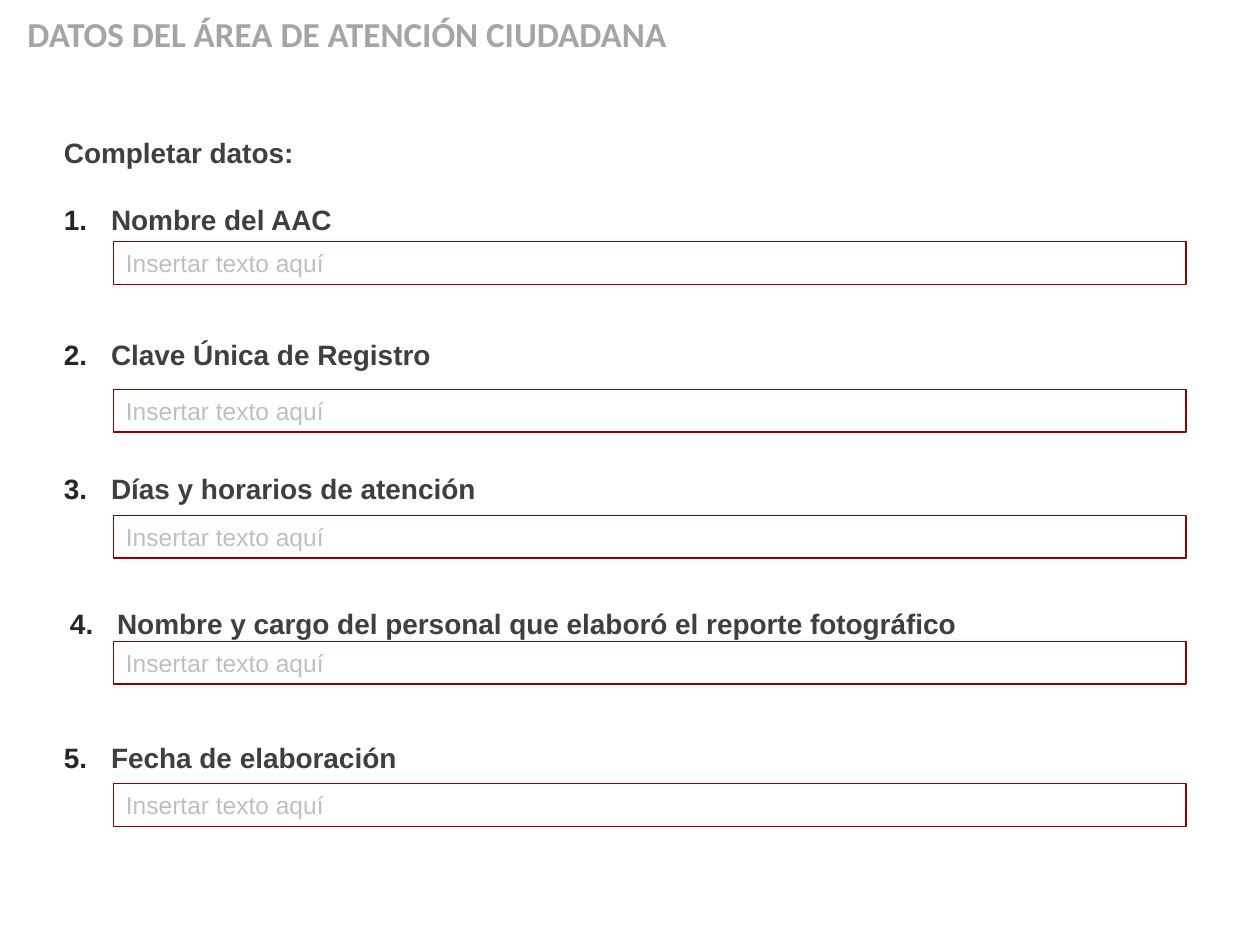
from lxml import etree
from pptx import Presentation
from pptx.dml.color import RGBColor
from pptx.enum.shapes import MSO_SHAPE
from pptx.enum.text import MSO_ANCHOR, MSO_AUTO_SIZE, PP_ALIGN
from pptx.oxml.ns import qn
from pptx.util import Cm, Pt

RECT = MSO_SHAPE.RECTANGLE
TOP = MSO_ANCHOR.TOP
FIXED = MSO_AUTO_SIZE.NONE
LEFT, MID = PP_ALIGN.LEFT, PP_ALIGN.CENTER

TITLE = "DATOS DEL ÁREA DE ATENCIÓN CIUDADANA"
INTRO = "Completar datos:"
HINT = "Insertar texto aquí"
FIELDS = [
    ("Nombre del AAC", LEFT, 4.87),
    ("Clave Única de Registro", LEFT, 7.85),
    ("Días y horarios de atención", LEFT, 10.39),
    ("Nombre y cargo del personal que elaboró el reporte fotográfico", MID, 12.93),
    ("Fecha de elaboración", LEFT, 15.8),
]
COLORS = {"title": "A5A5A5", "text": "3F3F3F", "number": "262626",
          "hint": "BFBFBF", "line": "980000"}
PITCH = Pt(38.4)
INDENT = Cm(0.95)


def color(name):
    return RGBColor.from_string(COLORS[name])


def setup(frame):
    frame.word_wrap = True
    frame.auto_size = FIXED
    frame.vertical_anchor = TOP


def write(para, text, size, face, tint, bold=False, align=LEFT):
    para.alignment = align
    run = para.add_run()
    run.text = text
    font = run.font
    font.size, font.name, font.bold = Pt(size), face, bold
    font.color.rgb = color(tint)


def number(para, start):
    props = para._p.get_or_add_pPr()
    props.set("marL", str(INDENT))
    props.set("indent", str(-INDENT))
    tint = etree.SubElement(props, qn("a:buClr"))
    etree.SubElement(tint, qn("a:srgbClr"), val=COLORS["number"])
    etree.SubElement(props, qn("a:buFont"), typeface="Arial")
    etree.SubElement(props, qn("a:buAutoNum"), type="arabicPeriod", startAt=str(start))


deck = Presentation()
deck.slide_width, deck.slide_height = Cm(25.4), Cm(19.05)
slide = deck.slides.add_slide(deck.slide_layouts[5])

title = slide.shapes.title
title.left, title.top, title.width, title.height = Cm(0.3), Cm(0.13), Cm(22.3), Cm(1.11)
setup(title.text_frame)
write(title.text_frame.paragraphs[0], TITLE, 20, "Calibri", "title", True)

form = slide.shapes.add_textbox(Cm(1.04), Cm(1.93), Cm(18.62), Cm(13.94)).text_frame
setup(form)
intro = form.paragraphs[0]
intro.line_spacing = PITCH
write(intro, INTRO, 16, "Arial", "text", True)

for index, (label, align, top) in enumerate(FIELDS):
    para = form.add_paragraph()
    para.line_spacing = PITCH
    para.space_before = PITCH if index else Pt(0)
    number(para, index + 1)
    write(para, label, 16, "Arial", "text", True, align)

    box = slide.shapes.add_shape(RECT, Cm(2.29), Cm(top), Cm(21.62), Cm(0.86))
    box.shadow.inherit = False
    box.fill.background()
    box.line.color.rgb = color("line")
    box.line.width = Pt(0.75)
    setup(box.text_frame)
    write(box.text_frame.paragraphs[0], HINT, 14, "Arial", "hint")

deck.save("out.pptx")
